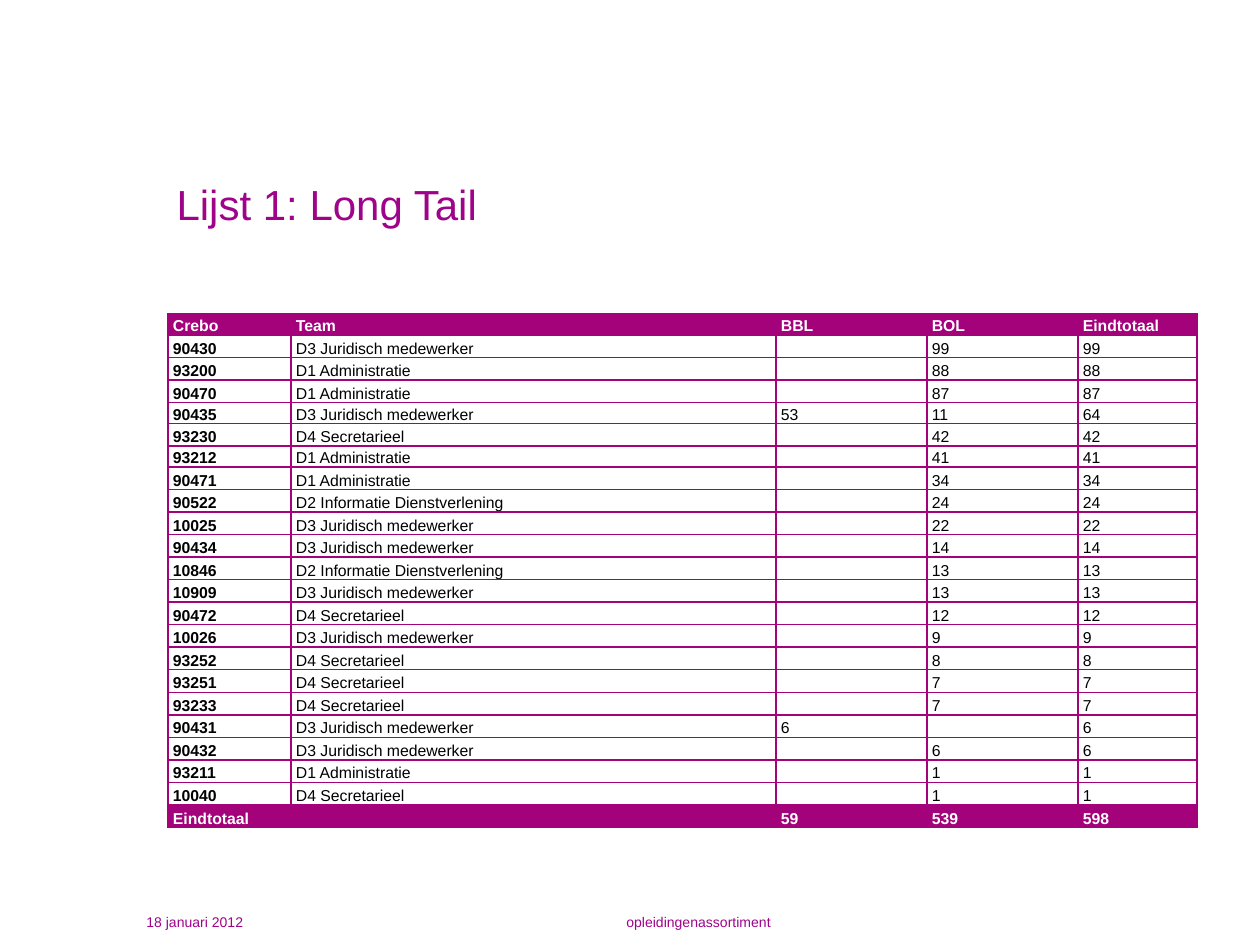
from dataclasses import dataclass

from lxml import etree
from pptx import Presentation
from pptx import util as u
from pptx.dml.color import RGBColor
from pptx.enum import text
from pptx.oxml import ns

PX = u.Inches(1) / 126


def px(n):
    return u.Emu(round(n * PX))


@dataclass(frozen=True)
class Theme:
    font: str = "Arial"
    heading: str = "9E0389"
    accent: str = "A3027B"
    body: str = "000000"
    inverse: str = "FFFFFF"
    title_size: int = 24
    table_size: int = 9
    footer_size: int = 8
    line_spacing: float = 1.15
    border: int = 1


HEADER = ("Crebo", "Team", "BBL", "BOL", "Eindtotaal")
ADMIN = "D1 Administratie"
INFO = "D2 Informatie Dienstverlening"
LEGAL = "D3 Juridisch medewerker"
OFFICE = "D4 Secretarieel"
PROGRAMMES = [
    ("90430", LEGAL, 0, 99),
    ("93200", ADMIN, 0, 88),
    ("90470", ADMIN, 0, 87),
    ("90435", LEGAL, 53, 11),
    ("93230", OFFICE, 0, 42),
    ("93212", ADMIN, 0, 41),
    ("90471", ADMIN, 0, 34),
    ("90522", INFO, 0, 24),
    ("10025", LEGAL, 0, 22),
    ("90434", LEGAL, 0, 14),
    ("10846", INFO, 0, 13),
    ("10909", LEGAL, 0, 13),
    ("90472", OFFICE, 0, 12),
    ("10026", LEGAL, 0, 9),
    ("93252", OFFICE, 0, 8),
    ("93251", OFFICE, 0, 7),
    ("93233", OFFICE, 0, 7),
    ("90431", LEGAL, 6, 0),
    ("90432", LEGAL, 0, 6),
    ("93211", ADMIN, 0, 1),
    ("10040", OFFICE, 0, 1),
]
COLUMNS = (123, 485, 151, 151, 119)
SHORT_ROWS = {0, 4, 6}
SHORT_HEIGHT = 21


def table_rows():
    bbl = sum(row[2] for row in PROGRAMMES)
    bol = sum(row[3] for row in PROGRAMMES)
    lines = PROGRAMMES + [("Eindtotaal", "", bbl, bol)]
    return [HEADER] + [(*line, line[2] + line[3]) for line in lines]


class Deck:
    def __init__(self, prs, theme):
        self.theme = theme
        self.s = prs.slides.add_slide(prs.slide_layouts[5])

    def style(self, p, size, color, bold=False):
        p.font.name = self.theme.font
        p.font.size = u.Pt(size)
        p.font.bold = bold
        p.font.color.rgb = RGBColor.from_string(color)

    def title(self, words, x, y, w, h):
        sp = self.s.shapes.title
        sp.left, sp.top, sp.width, sp.height = map(px, (x, y, w, h))
        tf = sp.text_frame
        tf.text = words
        tf.vertical_anchor = text.MSO_ANCHOR.MIDDLE
        p = tf.paragraphs[0]
        p.alignment = text.PP_ALIGN.LEFT
        self.style(p, self.theme.title_size, self.theme.heading)

    def footer(self, words, x, y, w, h, align=text.PP_ALIGN.LEFT, right=13):
        tf = self.s.shapes.add_textbox(*map(px, (x, y, w, h))).text_frame
        tf.word_wrap = True
        tf.margin_right = px(right)
        tf.text = words
        p = tf.paragraphs[0]
        p.alignment = align
        self.style(p, self.theme.footer_size, self.theme.heading)

    def borders(self, cell):
        tc_pr = cell._tc.get_or_add_tcPr()
        for side in ("lnL", "lnR", "lnT", "lnB"):
            ln = etree.SubElement(tc_pr, ns.qn(f"a:{side}"), w=str(u.Pt(self.theme.border)))
            fill = etree.SubElement(ln, ns.qn("a:solidFill"))
            etree.SubElement(fill, ns.qn("a:srgbClr"), val=self.theme.accent)

    def cell(self, cell, value, filled, bold):
        self.borders(cell)
        cell.margin_left = cell.margin_right = px(5)
        cell.margin_top = cell.margin_bottom = 0
        cell.vertical_anchor = text.MSO_ANCHOR.BOTTOM
        if filled:
            cell.fill.solid()
            cell.fill.fore_color.rgb = RGBColor.from_string(self.theme.accent)
        else:
            cell.fill.background()
        p = cell.text_frame.paragraphs[0]
        p.line_spacing = self.theme.line_spacing
        color = self.theme.inverse if filled else self.theme.body
        self.style(p, self.theme.table_size, color, bold)
        if value:
            p.add_run().text = str(value)
        else:
            etree.SubElement(p._p, ns.qn("a:endParaRPr"), sz=str(self.theme.table_size * 100))

    def table(self, rows, x, y, h):
        frame = self.s.shapes.add_table(
            len(rows), len(COLUMNS), px(x), px(y), px(sum(COLUMNS)), px(h))
        table = frame.table
        table.horz_banding = False
        table.first_row = False
        for column, width in zip(table.columns, COLUMNS):
            column.width = px(width)
        regular = (h - SHORT_HEIGHT * len(SHORT_ROWS)) / (len(rows) - len(SHORT_ROWS))
        for i, values in enumerate(rows):
            table.rows[i].height = px(SHORT_HEIGHT if i in SHORT_ROWS else regular)
            filled = i in (0, len(rows) - 1)
            for j, value in enumerate(values):
                self.cell(table.cell(i, j), value, filled, filled or j == 0)


def main():
    prs = Presentation()
    prs.slide_width, prs.slide_height = px(1260), px(945)
    deck = Deck(prs, Theme())
    deck.title("Lijst 1: Long Tail", 164, 125, 1033, 157)
    deck.table(table_rows(), 168, 314, 514)
    deck.footer("18 januari 2012", 134, 907, 277, 28)
    deck.footer("opleidingenassortiment", 412, 907, 586, 28, text.PP_ALIGN.CENTER, 25)
    prs.save("out.pptx")


if __name__ == "__main__":
    main()
